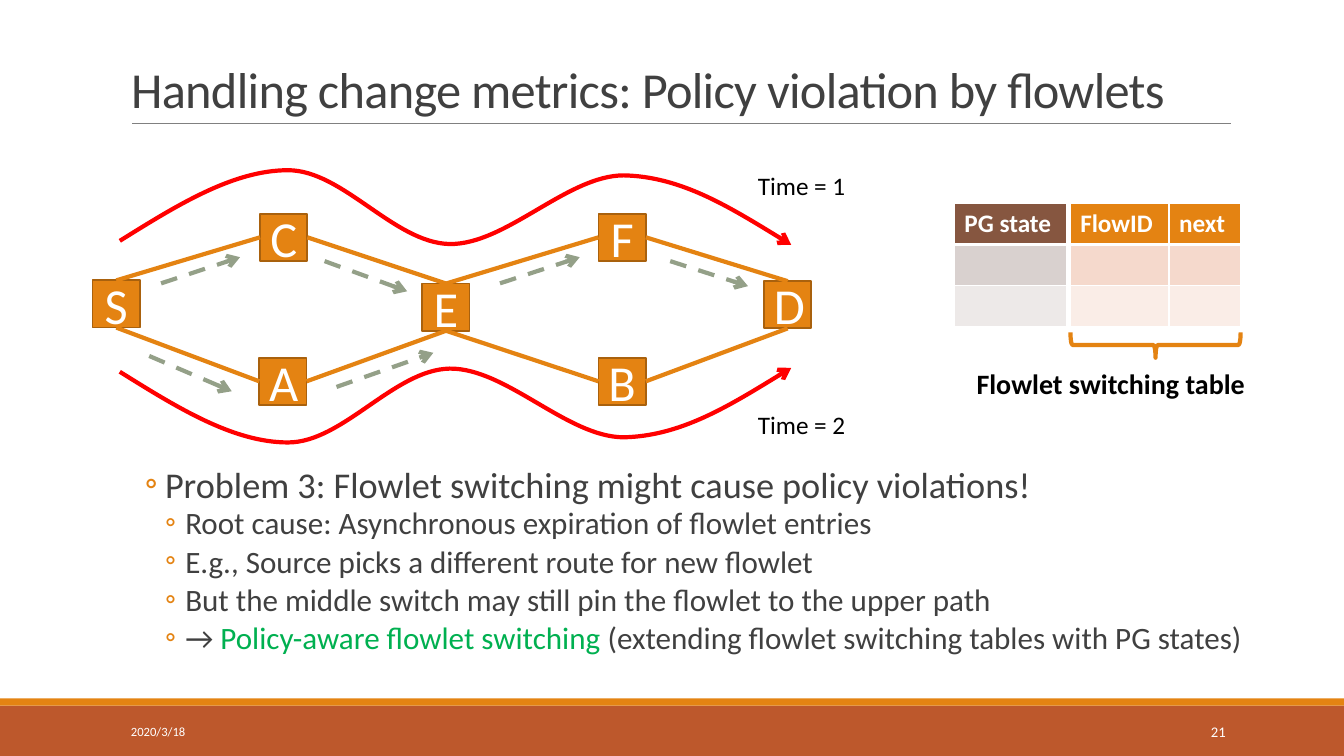
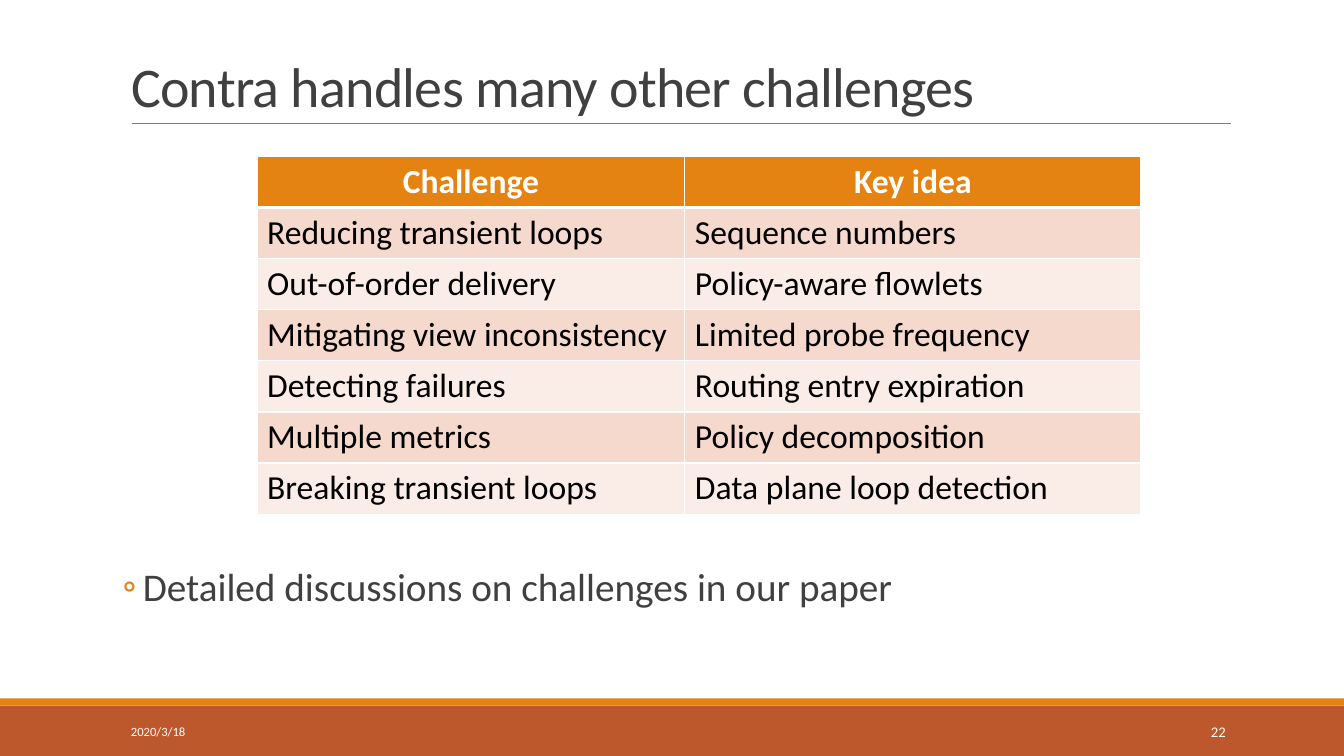
from dataclasses import dataclass

from lxml import etree
from pptx import Presentation
from pptx.dml.color import RGBColor
from pptx.enum.dml import MSO_LINE
from pptx.enum.shapes import MSO_CONNECTOR, MSO_SHAPE
from pptx.enum.text import MSO_ANCHOR, MSO_AUTO_SIZE, PP_ALIGN
from pptx.oxml.ns import qn
from pptx.util import Cm, Pt

RECT, BRACE = MSO_SHAPE.RECTANGLE, MSO_SHAPE.RIGHT_BRACE
LINE, DASH = MSO_CONNECTOR.STRAIGHT, MSO_LINE.DASH
LEFT, MID, RIGHT = PP_ALIGN.LEFT, PP_ALIGN.CENTER, PP_ALIGN.RIGHT
TOP, CENTER, BOTTOM = MSO_ANCHOR.TOP, MSO_ANCHOR.MIDDLE, MSO_ANCHOR.BOTTOM


@dataclass(frozen=True)
class Theme:
    font: str = "Calibri"
    ink: str = "404040"
    black: str = "000000"
    white: str = "FFFFFF"
    rust: str = "BD582C"
    orange: str = "E48312"
    edge: str = "A9610D"
    gray: str = "808080"
    sage: str = "94A088"
    red: str = "FF0000"
    green: str = "00B050"
    warm: tuple = ("E48312", "F5D9CC", "FAEDE7")
    brown: tuple = ("865640", "D9D1CF", "EDE9E8")
    date: float = 9
    page: float = 10.5
    small: float = 18
    label: float = 20
    cell: float = 24
    node: float = 36


T = Theme()

DATE = "2020/3/18"
TITLES = [
    ("Handling change metrics: Policy violation by flowlets", 36, "21"),
    ("Contra handles many other challenges", 40, "22"),
]
POINTS = [
    (0, 25.9, [("Problem 3: Flowlet switching might cause policy violations!", T.ink)]),
    (1, 22.2, [("Root cause: Asynchronous expiration of flowlet entries", T.ink)]),
    (1, 22.2, [("E.g., Source picks a different route for new flowlet", T.ink)]),
    (1, 22.2, [("But the middle switch may still pin the flowlet to the upper path", T.ink)]),
    (1, 22.2, [("→ ", T.ink), ("Policy-aware flowlet switching ", T.green),
               ("(extending flowlet switching tables with PG states)", T.ink)]),
]
PAPER = [(0, 28, [("Detailed discussions on challenges in our paper", T.ink)])]

SIDE = 1.19
NODES = {
    "S": (2.93, 7.66), "C": (7.15, 5.98), "A": (7.13, 9.61), "E": (11.24, 7.74),
    "F": (15.68, 5.98), "B": (15.68, 9.61), "D": (19.85, 7.68),
}
UP, WEST, DOWN, EAST = range(4)
LINKS = [
    ("S", UP, "C", WEST), ("S", DOWN, "A", WEST),
    ("C", EAST, "E", UP), ("A", EAST, "E", DOWN),
    ("E", UP, "F", WEST), ("E", DOWN, "B", WEST),
    ("F", EAST, "D", UP), ("B", EAST, "D", DOWN),
]
PROBES = [
    (3.76, 8.97, 5.84, 9.86), (8.48, 9.75, 10.92, 8.89),
    (12.6, 7.14, 14.61, 6.48), (16.89, 6.58, 18.85, 7.21),
    (4.06, 7.14, 6.05, 6.48), (8.18, 6.58, 10.26, 7.34),
]
ROUTE = [
    (3.02, 6.07), (4.45, 5.18), (5.87, 4.29), (7.26, 4.29),
    (8.64, 4.29), (9.93, 6.12), (11.33, 6.15),
    (12.75, 6.17), (14.3, 4.42), (15.72, 4.42),
    (17.15, 4.45), (18.54, 5.31), (19.94, 6.17),
]
MIRROR = 15.44
LABELS = [
    ("Time = 1", (18.85, 4.17, 2.74, 1.02), T.small, False),
    ("Time = 2", (18.85, 10.19, 2.74, 1.02), T.small, False),
    ("Flowlet switching table", (24.36, 9.12, 7.32, 1.12), T.label, True),
]
FLOWS = [("FlowID", "next"), ("", ""), ("", "")]
STATES = [("PG state",), ("",), ("",)]
IDEAS = [
    ("Challenge", "Key idea"),
    ("Reducing transient loops", "Sequence numbers"),
    ("Out-of-order delivery", "Policy-aware flowlets"),
    ("Mitigating view inconsistency", "Limited probe frequency"),
    ("Detecting failures", "Routing entry expiration"),
    ("Multiple metrics", "Policy decomposition"),
    ("Breaking transient loops", "Data plane loop detection"),
]


def rgb(code):
    return RGBColor.from_string(code)


def cm(vals):
    return [Cm(v) for v in vals]


def sub(node, tag, **attrs):
    return etree.SubElement(node, qn(tag), attrs)


def style(para, size, color, bold=False, align=LEFT):
    para.alignment = align
    font = para.font
    font.name, font.size, font.bold = T.font, Pt(size), bold
    font.color.rgb = rgb(color)


def write(slide, text, box, size, color, bold=False, align=LEFT, anchor=TOP, wrap=False):
    frame = slide.shapes.add_textbox(*cm(box)).text_frame
    frame.word_wrap, frame.auto_size = wrap, MSO_AUTO_SIZE.NONE
    frame.vertical_anchor = anchor
    frame.text = text
    style(frame.paragraphs[0], size, color, bold, align)


def block(slide, kind, box, fill=None, line=None, width=1):
    shape = slide.shapes.add_shape(kind, *cm(box))
    shape.shadow.inherit = False
    if fill:
        shape.fill.solid()
        shape.fill.fore_color.rgb = rgb(fill)
    else:
        shape.fill.background()
    if line:
        stroke(shape, line, width)
    else:
        shape.line.fill.background()
    return shape


def stroke(shape, color, width, dash=None, tip=False):
    shape.line.color.rgb = rgb(color)
    shape.line.width = Pt(width)
    if dash:
        shape.line.dash_style = dash
    if tip:
        sub(shape.element.spPr.find(qn("a:ln")), "a:tailEnd", type="arrow")


def link(slide, ends, color, width, dash=None, tip=False):
    wire = slide.shapes.add_connector(LINE, *cm(ends))
    stroke(wire, color, width, dash, tip)
    sub(wire.element.spPr, "a:effectLst")
    return wire


def curve(slide, points):
    spots = [cm(p) for p in points]
    pen = slide.shapes.build_freeform(*spots[0])
    pen.add_line_segments(spots[1:], close=False)
    shape = pen.convert_to_shape()
    shape.shadow.inherit = False
    shape.fill.background()
    stroke(shape, T.red, 3, tip=True)
    legs = list(shape.element.iter(qn("a:lnTo")))
    for i in range(0, len(legs), 3):
        bend = etree.Element(qn("a:cubicBezTo"))
        legs[i].addprevious(bend)
        for leg in legs[i:i + 3]:
            bend.append(leg[0])
            leg.getparent().remove(leg)


def bullets(slide, points, box, space):
    frame = slide.shapes.add_textbox(*cm(box)).text_frame
    frame.word_wrap, frame.auto_size = True, MSO_AUTO_SIZE.NONE
    frame.margin_left = frame.margin_right = 0
    for i, (level, size, runs) in enumerate(points):
        para = frame.paragraphs[0] if i == 0 else frame.add_paragraph()
        para.level = level
        para.line_spacing = space
        para.space_before, para.space_after = [(Pt(12), Pt(2)), (Pt(2), Pt(4))][level]
        props = para._p.get_or_add_pPr()
        props.set("marL", str(Cm(0.55 + 0.51 * level)))
        props.set("indent", str(Cm(-0.51)))
        sub(sub(props, "a:buClr"), "a:srgbClr", val=T.orange)
        sub(props, "a:buFont", typeface=T.font)
        sub(props, "a:buChar", char="◦")
        style(para, size, T.ink)
        for text, color in runs:
            run = para.add_run()
            run.text = text
            if color != T.ink:
                run.font.color.rgb = rgb(color)


def border(cell, row):
    props = cell._tc.get_or_add_tcPr()
    for side in "LRTB":
        thick = (row, side) in ((0, "B"), (1, "T"))
        line = sub(props, "a:ln" + side, w=str(Pt(3 if thick else 1)))
        sub(sub(line, "a:solidFill"), "a:srgbClr", val=T.white)


def grid(slide, rows, spot, cols, high, fills, size, align=LEFT):
    box = (*spot, sum(cols), high * len(rows))
    table = slide.shapes.add_table(len(rows), len(cols), *cm(box)).table
    table.horz_banding = False
    for col, wide in zip(table.columns, cols):
        col.width = Cm(wide)
    for r, row in enumerate(rows):
        table.rows[r].height = Cm(high)
        head = r == 0
        for c, text in enumerate(row):
            cell = table.cell(r, c)
            border(cell, r)
            cell.fill.solid()
            cell.fill.fore_color.rgb = rgb(fills[0 if head else 2 - r % 2])
            cell.text = text
            style(cell.text_frame.paragraphs[0], size,
                  T.white if head else T.black, head, align if head else LEFT)


def start(deck, title, size, page):
    slide = deck.slides.add_slide(deck.slide_layouts[5])
    block(slide, RECT, (0, 17.78, 33.87, 1.27), T.rust)
    block(slide, RECT, (0, 17.6, 33.87, 0.18), T.orange)
    link(slide, (3.33, 3.12, 31.01, 3.12), T.gray, 0.5)
    head = slide.shapes.title
    head.left, head.top, head.width, head.height = cm((3.05, 0.79, 27.94, 2.34))
    frame = head.text_frame
    frame.text = title
    frame.word_wrap, frame.auto_size = True, MSO_AUTO_SIZE.NONE
    frame.vertical_anchor = BOTTOM
    para = frame.paragraphs[0]
    para.line_spacing = 0.85
    style(para, size, T.ink)
    para._p.pPr.find(qn("a:defRPr")).set("spc", "-50")
    write(slide, DATE, (3.05, 17.93, 6.86, 1.02), T.date, T.white, anchor=CENTER, wrap=True)
    write(slide, page, (27.51, 17.93, 3.63, 1.02), T.page, T.white,
          align=RIGHT, anchor=CENTER, wrap=True)
    return slide


def network(slide):
    nodes = {}
    for name, (x, y) in NODES.items():
        node = block(slide, RECT, (x - SIDE / 2, y - SIDE / 2, SIDE, SIDE),
                     T.orange, T.edge, 1.25)
        node.text_frame.text = name
        node.text_frame.vertical_anchor = CENTER
        style(node.text_frame.paragraphs[0], T.node, T.white, align=MID)
        nodes[name] = node
    for a, out, b, into in LINKS:
        wire = link(slide, (0, 0, 1, 1), T.orange, 3)
        wire.begin_connect(nodes[a], out)
        wire.end_connect(nodes[b], into)
    for ends in PROBES:
        link(slide, ends, T.sage, 3, DASH, True)
    curve(slide, ROUTE)
    curve(slide, [(x, MIRROR - y) for x, y in ROUTE])


def main():
    deck = Presentation()
    deck.slide_width, deck.slide_height = Cm(33.87), Cm(19.05)

    first, last = [start(deck, *item) for item in TITLES]
    bullets(first, POINTS, (3.61, 11.73, 27.94, 5.41), 0.8)
    network(first)
    grid(first, FLOWS, (26.97, 5.13), (2.49, 1.8), 1.03, T.warm, T.small)
    grid(first, STATES, (24.05, 5.13), (2.84,), 1.03, T.brown, T.small)
    block(first, BRACE, (28.8, 6.55, 0.64, 4.29), line=T.orange, width=3).rotation = 90
    for text, box, size, bold in LABELS:
        write(first, text, box, size, T.black, bold)

    bullets(last, PAPER, (3.05, 14.17, 27.94, 2.95), 0.9)
    grid(last, IDEAS, (6.48, 3.94), (10.78, 11.49), 1.27, T.warm, T.cell, MID)
    deck.save("out.pptx")


if __name__ == "__main__":
    main()
